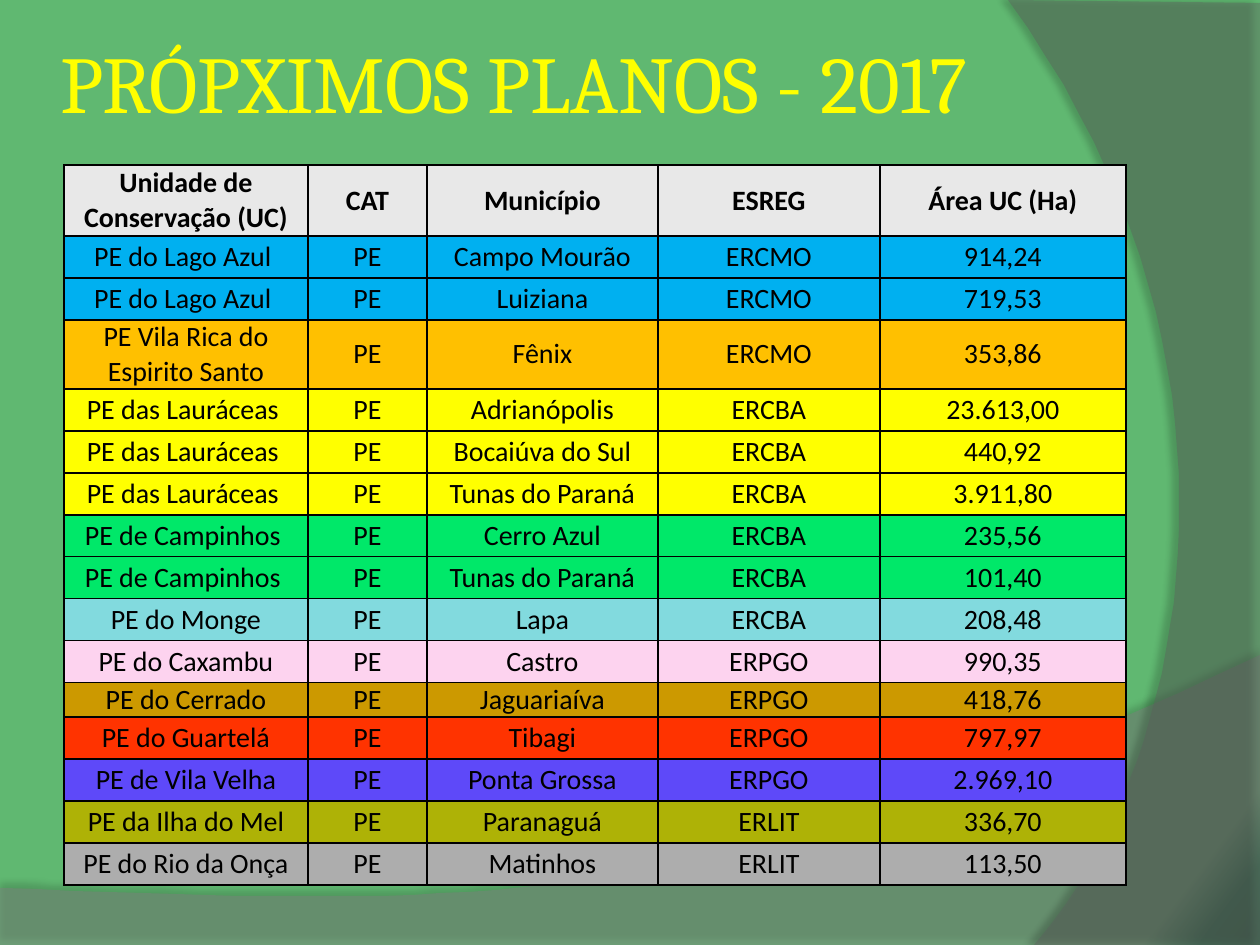
from lxml.etree import SubElement
from pptx import Presentation
from pptx.dml.color import RGBColor
from pptx.enum.text import MSO_ANCHOR, PP_ALIGN
from pptx.oxml import parse_xml
from pptx.oxml.ns import nsdecls, qn
from pptx.util import Pt

PX = 914400 // 126


def rgb(code):
    return RGBColor.from_string(code)


def add_swoosh(corners, curve, color, opacity, shadow_opacity, distance, direction):
    """Draw a shadowed outline through the corners and along a cubic curve."""
    steps = 40
    bend = []
    for step in range(1, steps + 1):
        t = step / steps
        weights = ((1 - t) ** 3, 3 * t * (1 - t) ** 2, 3 * t * t * (1 - t), t ** 3)
        bend.append(tuple(sum(w * point[axis] for w, point in zip(weights, curve))
                          for axis in (0, 1)))
    builder = slide.shapes.build_freeform(*corners[0], scale=PX)
    builder.add_line_segments(corners[1:] + [curve[0]] + bend, close=True)
    swoosh = builder.convert_to_shape()
    swoosh.fill.solid()
    swoosh.fill.fore_color.rgb = rgb(color)
    swoosh.line.fill.background()
    fill_color = swoosh.element.spPr.find(qn("a:solidFill"))[0]
    SubElement(fill_color, qn("a:alpha"), val=str(opacity * 1000))
    swoosh.element.spPr.append(parse_xml(
        f'<a:effectLst {nsdecls("a")}><a:outerShdw blurRad="{Pt(4)}" '
        f'dist="{Pt(distance)}" dir="{direction * 60000}" algn="ctr" rotWithShape="0">'
        f'<a:srgbClr val="000000"><a:alpha val="{shadow_opacity * 1000}"/></a:srgbClr>'
        '</a:outerShdw></a:effectLst>'))


presentation = Presentation()
presentation.slide_width = 1260 * PX
presentation.slide_height = 945 * PX
slide = presentation.slides.add_slide(presentation.slide_layouts[6])

# Background: dark green in the lower right corner, light green elsewhere
backdrop = slide.background.fill
backdrop.gradient()
gradient = slide.element.cSld.find(".//" + qn("a:gradFill"))
stops = gradient.find(qn("a:gsLst"))
for stop in list(stops):
    stops.remove(stop)
for position, color in ((0, "005928"), (3, "006A30"), (6, "60B871")):
    stop = SubElement(stops, qn("a:gs"), pos=str(position * 1000))
    SubElement(stop, qn("a:srgbClr"), val=color)
gradient.find(qn("a:lin")).set("ang", str(217 * 60000))

add_swoosh([(0, 888), (0, 946), (1260, 946)],
           [(1260, 655), (704, 919), (493, 906), (0, 888)],
           "7F7F7F", 45, 35, 3.5, 270)
add_swoosh([(1260, 3), (1260, 945)],
           [(1034, 945), (1178, 780), (1283, 378), (1008, 0)],
           "5E5E5E", 40, 45, 4, 180)

# Conservation units, one fill colour per unit
HEADER = ("Unidade de Conservação (UC)", "CAT", "Município", "ESREG", "Área UC (Ha)")
UNITS = [
    ("PE do Lago Azul ", "Campo Mourão", "ERCMO", "914,24", "00B0F0"),
    ("PE do Lago Azul ", "Luiziana", "ERCMO", "719,53", "00B0F0"),
    ("PE Vila Rica do Espirito Santo", "Fênix", "ERCMO", "353,86", "FFC000"),
    ("PE das Lauráceas ", "Adrianópolis", "ERCBA", "23.613,00", "FFFF00"),
    ("PE das Lauráceas ", "Bocaiúva do Sul", "ERCBA", "440,92", "FFFF00"),
    ("PE das Lauráceas ", "Tunas do Paraná", "ERCBA", "3.911,80", "FFFF00"),
    ("PE de Campinhos ", "Cerro Azul", "ERCBA", "235,56", "00E869"),
    ("PE de Campinhos ", "Tunas do Paraná", "ERCBA", "101,40", "00E869"),
    ("PE do Monge", "Lapa", "ERCBA", "208,48", "82DADE"),
    ("PE do Caxambu", "Castro", "ERPGO", "990,35", "FDD3EF"),
    ("PE do Cerrado", "Jaguariaíva", "ERPGO", "418,76", "CC9900"),
    ("PE do Guartelá", "Tibagi", "ERPGO", "797,97", "FF3300"),
    ("PE de Vila Velha", "Ponta Grossa", "ERPGO", "2.969,10", "5E49F9"),
    ("PE da Ilha do Mel", "Paranaguá", "ERLIT", "336,70", "AEB206"),
    ("PE do Rio da Onça", "Matinhos", "ERLIT", "113,50", "ADADAD"),
]
COLUMN_WIDTHS = (244, 119, 231, 222, 246)
ROW_HEIGHT = 42
SPECIAL_HEIGHTS = {0: 71, 3: 69, 11: 34}

rows = [(HEADER, "E8E8E8")]
rows += [((unit, "PE", town, office, area), color)
         for unit, town, office, area, color in UNITS]
heights = [SPECIAL_HEIGHTS.get(index, ROW_HEIGHT) for index in range(len(rows))]
units_table = slide.shapes.add_table(
    len(rows), len(HEADER), 64 * PX, 165 * PX,
    sum(COLUMN_WIDTHS) * PX, sum(heights) * PX).table
for column, width in zip(units_table.columns, COLUMN_WIDTHS):
    column.width = width * PX

for row_index, (values, color) in enumerate(rows):
    units_table.rows[row_index].height = heights[row_index] * PX
    for column_index, value in enumerate(values):
        cell = units_table.cell(row_index, column_index)
        cell.margin_left = cell.margin_right = cell.margin_top = cell.margin_bottom = 0
        cell.vertical_anchor = MSO_ANCHOR.MIDDLE
        cell.text_frame.text = value
        paragraph = cell.text_frame.paragraphs[0]
        paragraph.alignment = PP_ALIGN.CENTER
        font = paragraph.runs[0].font
        font.name = "Calibri"
        font.size = Pt(16)
        font.bold = row_index == 0
        font.color.rgb = rgb("000000")
        properties = cell._tc.get_or_add_tcPr()
        for side in ("lnL", "lnR", "lnT", "lnB"):
            border = SubElement(properties, qn(f"a:{side}"), w=str(Pt(1)))
            SubElement(SubElement(border, qn("a:solidFill")), qn("a:srgbClr"), val="000000")
        cell.fill.solid()
        cell.fill.fore_color.rgb = rgb(color)

title = slide.shapes.add_textbox(54 * PX, 3 * PX, 1029 * PX, 157 * PX).text_frame
title.word_wrap = True
title.vertical_anchor = MSO_ANCHOR.MIDDLE
title.margin_left = title.margin_right = title.margin_top = title.margin_bottom = 6 * PX
title.text = "PRÓPXIMOS PLANOS - 2017"
title_font = title.paragraphs[0].runs[0].font
title_font.name = "Cambria"
title_font.size = Pt(46)
title_font.color.rgb = rgb("FFFF00")

presentation.save("out.pptx")
